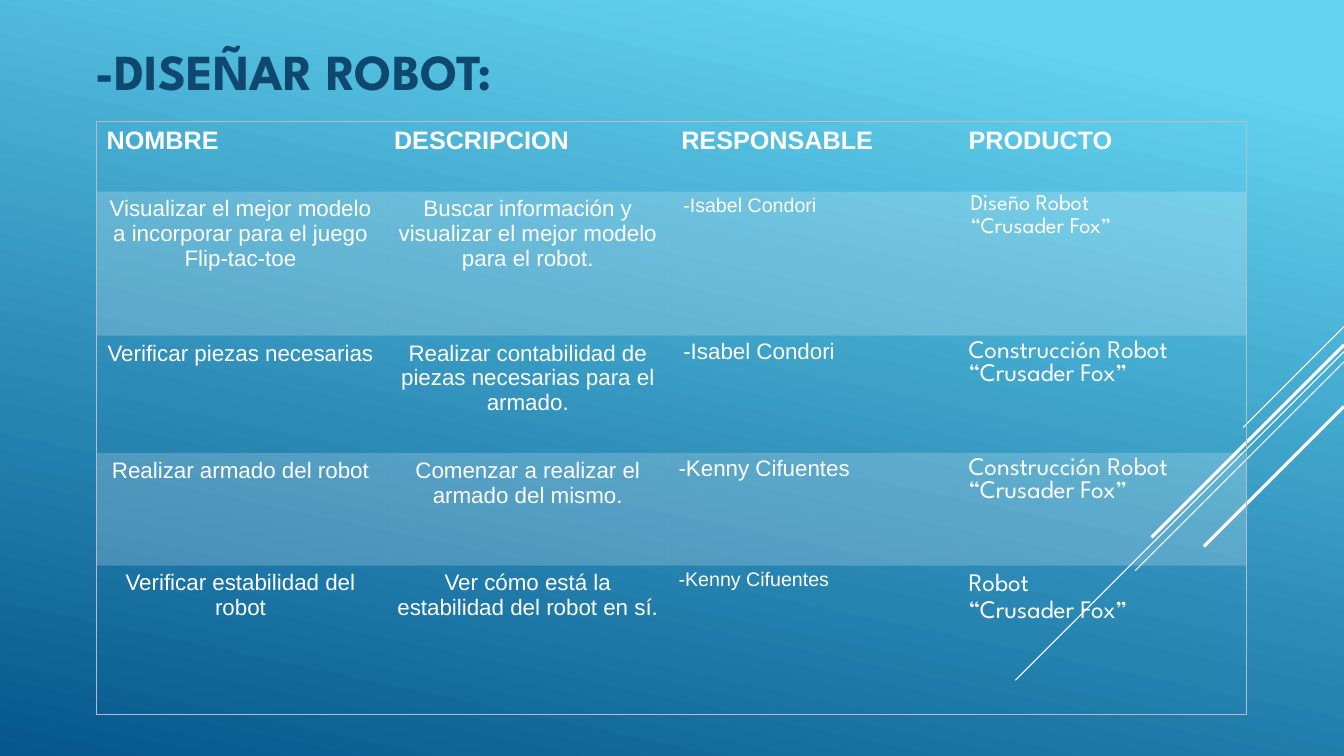
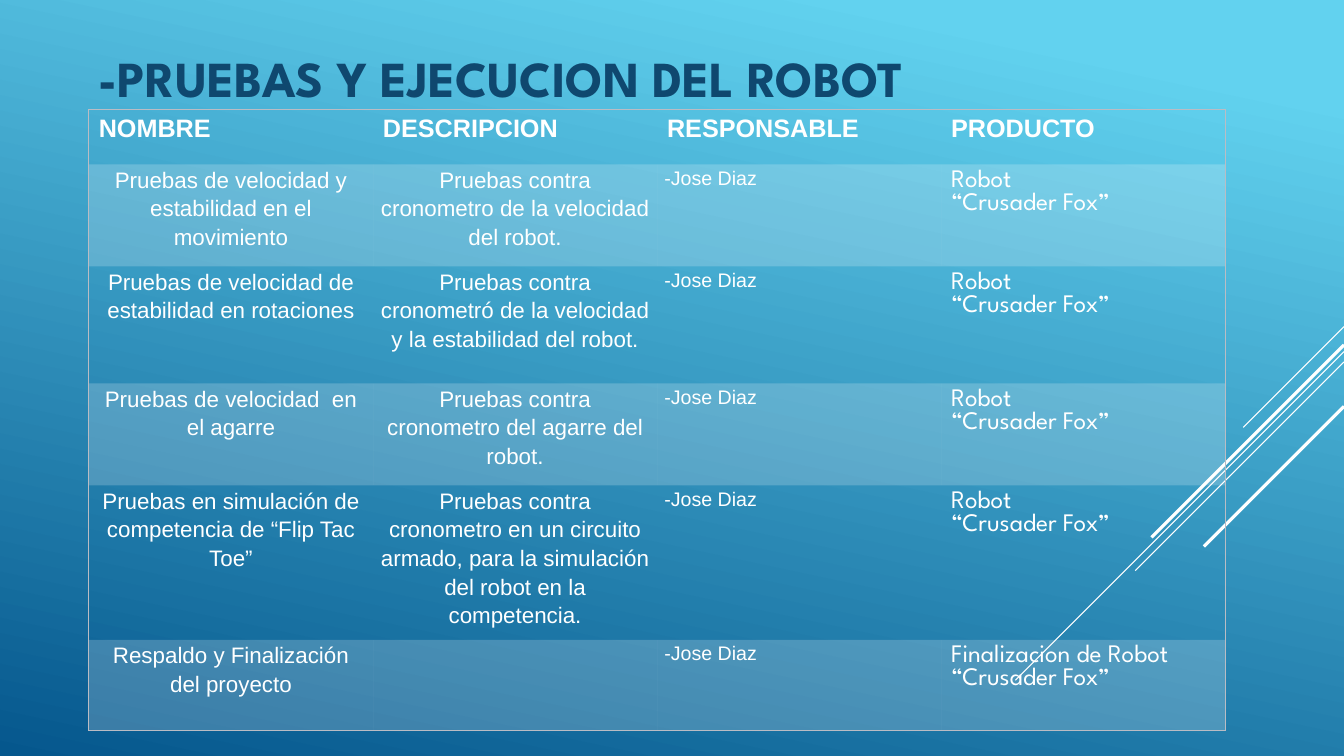
"""Build the two robot project planning slides."""
from dataclasses import dataclass, replace

from lxml import etree
from pptx import Presentation
from pptx.dml.color import RGBColor
from pptx.enum import shapes, text
from pptx.oxml.ns import qn
from pptx.util import Cm, Pt

WHITE = RGBColor(0xFF, 0xFF, 0xFF)
NAVY = RGBColor(0x0F, 0x48, 0x6F)
SKY = RGBColor(0x62, 0xD2, 0xEF)
DEEP = RGBColor(0x05, 0x57, 0x8D)
EDGE = RGBColor(0xBA, 0xBC, 0xC4)
BODY_FONT = "Arial"
DISPLAY_FONT = "League Spartan"
NO_GRID_STYLE = "{2D5ABB26-0587-4C30-8999-92F81FD0307C}"
SLIDE_W, SLIDE_H = 33.87, 19.05
STREAKS = [(8.23, 2.54, 0.75), (8.86, 8.28, 0.75), (9.12, 5.26, 0.75),
           (8.69, 4.85, 2.25), (10.24, 3.53, 2.25)]
ROOMY, WIDE, TIGHT = (0.25, 0.13), (0.3, 0), (0.18, 0)


@dataclass(frozen=True)
class Look:
    """Text style of a table cell."""
    size: int = 16
    font: str = BODY_FONT
    bold: bool = False
    align: text.PP_ALIGN = text.PP_ALIGN.LEFT
    inset: tuple = ROOMY
    spacing: float = 1.0


HEADER = Look(size=18, bold=True)
TASK = Look(align=text.PP_ALIGN.CENTER)
TIGHT_TASK = replace(TASK, inset=TIGHT, spacing=1.15)
OWNER = Look(inset=TIGHT, spacing=1.15)
SMALL_OWNER = replace(OWNER, size=14)
PRODUCT = Look(size=18, font=DISPLAY_FONT)
HEADINGS = [(h, HEADER) for h in ("NOMBRE", "DESCRIPCION", "RESPONSABLE", "PRODUCTO")]


class Deck:
    """Holds the presentation style and the current slide."""

    def __init__(self):
        """Start an empty widescreen presentation."""
        self.prs = Presentation()
        self.prs.slide_width, self.prs.slide_height = Cm(SLIDE_W), Cm(SLIDE_H)
        self.s = None

    def slide(self, title, left, top, bottom_inset=0.13):
        """Add a slide with background, streaks and title."""
        self.s = self.prs.slides.add_slide(self.prs.slide_layouts[6])
        fill = self.s.background.fill
        fill.gradient()
        fill.gradient_angle = 258
        for stop, position, color in zip(fill.gradient_stops, (0.1, 1), (SKY, DEEP)):
            stop.position = position
            stop.color.rgb = color
        for y, reach, width in STREAKS:
            self.streak(y, reach, width)
        self.title(title, left, top, bottom_inset)

    def streak(self, y, reach, width):
        """Draw a 45 degree line down from the right edge."""
        c = self.s.shapes.add_connector(
            shapes.MSO_CONNECTOR.STRAIGHT, Cm(SLIDE_W), Cm(y),
            Cm(SLIDE_W - reach), Cm(y + reach))
        c.line.color.rgb = WHITE
        c.line.width = Pt(width)
        etree.SubElement(c.element.spPr, qn("a:effectLst"))

    def title(self, words, left, top, bottom_inset):
        """Add the slide title."""
        tf = self.s.shapes.add_textbox(Cm(left), Cm(top), Cm(27.5), Cm(4.11)).text_frame
        tf.word_wrap = True
        tf.vertical_anchor = text.MSO_ANCHOR.MIDDLE
        tf.margin_left = tf.margin_right = Cm(0.25)
        tf.margin_top, tf.margin_bottom = Cm(0.13), Cm(bottom_inset)
        self.put_text(tf, words, Look(36, DISPLAY_FONT, True, spacing=0.9), NAVY)

    def put_text(self, tf, words, look, color=WHITE):
        """Fill the first paragraph, breaking at line ends."""
        p = tf.paragraphs[0]
        p.alignment, p.line_spacing = look.align, look.spacing
        for i, line in enumerate(words.split("\n")):
            if i:
                p.add_line_break()
            r = p.add_run()
            r.text = line
            r.font.size, r.font.name, r.font.bold = Pt(look.size), look.font, look.bold
            r.font.color.rgb = color

    def table(self, left, top, col_width, heights, rows):
        """Add a framed table with translucent alternate rows."""
        rows = [HEADINGS] + rows
        n_rows, n_cols = len(rows), len(HEADINGS)
        gf = self.s.shapes.add_table(n_rows, n_cols, Cm(left), Cm(top),
                                     Cm(col_width * n_cols), Cm(sum(heights)))
        next(gf.element.iter(qn("a:tableStyleId"))).text = NO_GRID_STYLE
        t = gf.table
        t.first_row = t.horz_banding = False
        for col in t.columns:
            col.width = Cm(col_width)
        for i, (height, row) in enumerate(zip(heights, rows)):
            t.rows[i].height = Cm(height)
            for j, (words, look) in enumerate(row):
                sides = {"L": j == 0, "R": j == n_cols - 1,
                         "T": i == 0, "B": i == n_rows - 1}
                self.cell(t.cell(i, j), words, look, sides, banded=i % 2 == 1)

    def cell(self, cell, words, look, sides, banded):
        """Style and fill one table cell."""
        cell.margin_left = cell.margin_right = Cm(look.inset[0])
        cell.margin_top = cell.margin_bottom = Cm(look.inset[1])
        tcPr = cell._tc.get_or_add_tcPr()
        for side, outer in sides.items():
            if outer:
                ln = etree.SubElement(tcPr, qn("a:ln" + side), w=str(int(Pt(0.75))))
                solid = etree.SubElement(ln, qn("a:solidFill"))
                etree.SubElement(solid, qn("a:srgbClr"), val=str(EDGE))
        if banded:
            cell.fill.solid()
            cell.fill.fore_color.rgb = WHITE
            etree.SubElement(next(tcPr.find(qn("a:solidFill")).iter(qn("a:srgbClr"))),
                             qn("a:alpha"), val="20000")
        else:
            cell.fill.background()
        if words:
            self.put_text(cell.text_frame, words, look)


def main():
    """Build and save both slides."""
    deck = Deck()
    fox = "\n“Crusader Fox”"

    deck.slide("-DISEÑAR ROBOT:", 2.16, 0.56, bottom_inset=1.6)
    deck.table(2.44, 3.05, 7.24, [1.78, 3.63, 2.95, 2.84, 3.76], [
        [("Visualizar el mejor modelo a incorporar para el juego Flip-tac-toe", TASK),
         ("Buscar información y visualizar el mejor modelo para el robot.", TASK),
         ("-Isabel Condori", replace(SMALL_OWNER, inset=WIDE)),
         ("Diseño Robot" + fox, replace(PRODUCT, size=16, inset=WIDE, spacing=1.15))],
        [("Verificar piezas necesarias", TASK),
         ("Realizar contabilidad de piezas necesarias para el armado.", TASK),
         ("-Isabel Condori", replace(OWNER, inset=WIDE)),
         ("Construcción Robot" + fox, PRODUCT)],
        [("Realizar armado del robot", TASK),
         ("Comenzar a realizar el armado del mismo.", TASK),
         ("-Kenny Cifuentes", OWNER),
         ("Construcción Robot" + fox, PRODUCT)],
        [("Verificar estabilidad del robot", TASK),
         ("Ver cómo está la estabilidad del robot en sí.", TASK),
         ("-Kenny Cifuentes", SMALL_OWNER),
         ("Robot" + fox, replace(PRODUCT, spacing=1.15))],
    ])

    tests = [
        ("Pruebas de velocidad y estabilidad en el movimiento",
         "Pruebas contra cronometro de la velocidad del robot.", "Robot"),
        ("Pruebas de velocidad de estabilidad en rotaciones",
         "Pruebas contra cronometró de la velocidad y la estabilidad del robot.", "Robot"),
        ("Pruebas de velocidad  en el agarre",
         "Pruebas contra cronometro del agarre del robot.", "Robot"),
        ("Pruebas en simulación de competencia de “Flip Tac Toe”",
         "Pruebas contra cronometro en un circuito armado, para la simulación "
         "del robot en la competencia.", "Robot"),
        ("Respaldo y Finalización del proyecto", "", "Finalizacion de Robot"),
    ]
    deck.slide("-PRUEBAS Y EJECUCION DEL ROBOT", 2.24, 0)
    deck.table(2.24, 2.77, 7.16, [1.37, 2.57, 2.95, 2.57, 3.68, 2.29], [
        [(name, TIGHT_TASK), (detail, TIGHT_TASK),
         ("-Jose Diaz", SMALL_OWNER), (product + fox, PRODUCT)]
        for name, detail, product in tests
    ])
    deck.prs.save("out.pptx")


if __name__ == "__main__":
    main()
